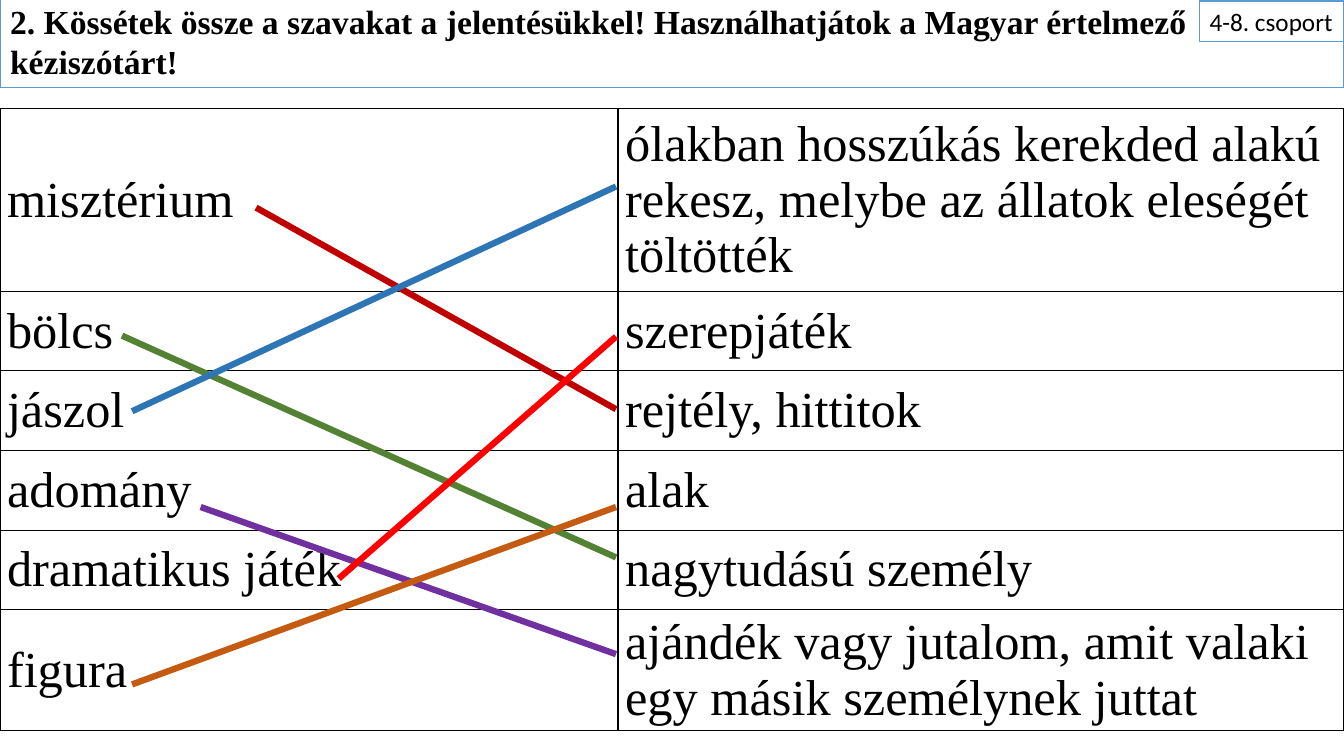
from dataclasses import dataclass

from lxml import etree
from pptx import Presentation
from pptx.dml.color import RGBColor
from pptx.enum.shapes import MSO_CONNECTOR, MSO_SHAPE
from pptx.enum.text import MSO_ANCHOR, MSO_AUTO_SIZE, PP_ALIGN
from pptx.oxml import parse_xml
from pptx.oxml.ns import nsdecls, qn
from pptx.util import Inches, Pt

LINE = MSO_CONNECTOR.STRAIGHT
RECT = MSO_SHAPE.RECTANGLE
MIDDLE = MSO_ANCHOR.MIDDLE
TOP = MSO_ANCHOR.TOP
NO_FIT = MSO_AUTO_SIZE.NONE
LEFT = PP_ALIGN.LEFT


@dataclass(frozen=True)
class Theme:
    """Colours, fonts and type sizes of the slide."""
    ink: str = "000000"
    paper: str = "FFFFFF"
    frame: str = "5B9BD5"
    serif: str = "Times New Roman"
    sans: str = "Calibri"
    head: int = 24
    label: int = 18
    cell: int = 36
    thin: float = 1
    thick: float = 4.5


THEME = Theme()
TASK = ("2. Kössétek össze a szavakat a jelentésükkel! "
        "Használhatjátok a Magyar értelmező kéziszótárt!")
ROWS = [
    ("misztérium", "ólakban hosszúkás kerekded alakú rekesz, "
                   "melybe az állatok eleségét töltötték", 1.81),
    ("bölcs", "szerepjáték", 0.79),
    ("jászol", "rejtély, hittitok", 0.79),
    ("adomány", "alak", 0.79),
    ("dramatikus játék", "nagytudású személy", 0.79),
    ("figura", "ajándék vagy jutalom, amit valaki egy másik "
               "személynek juttat", 1.2),
]
LINKS = [
    (2.54, 0.98, 2.98, "C00000"),
    (1.21, 2.25, 4.45, "548235"),
    (1.31, 3.0, 0.77, "2E75B6"),
    (1.99, 3.95, 5.41, "7030A0"),
    (3.36, 4.66, 2.26, "FF0000"),
    (1.31, 5.71, 3.95, "C55A11"),
]


def paint(fill, colour):
    """Give a fill one solid colour."""
    fill.solid()
    fill.fore_color.rgb = RGBColor.from_string(colour)


def write(frame, text, font, size, bold=False):
    """Put one left-aligned line of text in a frame."""
    frame.text = text
    para = frame.paragraphs[0]
    para.alignment = LEFT
    para.font.name = font
    para.font.size = Pt(size)
    para.font.bold = bold
    para.font.color.rgb = RGBColor.from_string(THEME.ink)


def panel(shape):
    """Give a shape the white fill and blue outline."""
    paint(shape.fill, THEME.paper)
    paint(shape.line.fill, THEME.frame)
    shape.line.width = Pt(THEME.thin)


def header(slide, x, y, w, h):
    """Place the task in the title and the group tag at its right end."""
    title = slide.shapes.title
    title.left, title.top, title.width, title.height = map(
        Inches, (x, y, w, h))
    panel(title)
    write(title.text_frame, TASK, THEME.serif, THEME.head, True)
    title.text_frame.auto_size = NO_FIT
    title.text_frame.vertical_anchor = TOP

    wide = 1.43
    tag = slide.shapes.add_shape(
        RECT, Inches(x + w - wide), Inches(y + 0.05), Inches(wide), Inches(0.4))
    tag.shadow.inherit = False
    panel(tag)
    write(tag.text_frame, "4-8. csoport", THEME.sans, THEME.label)
    tag.text_frame.word_wrap = False
    tag.text_frame.vertical_anchor = TOP


def border(cell):
    """Draw thin black lines on all four sides of a cell."""
    props = cell._tc.get_or_add_tcPr()
    for spot, side in enumerate(("lnL", "lnR", "lnT", "lnB")):
        props.insert(spot, parse_xml(
            f'<a:{side} {nsdecls("a")} w="{Pt(THEME.thin)}"><a:solidFill>'
            f'<a:srgbClr val="{THEME.ink}"/></a:solidFill></a:{side}>'))


def board(slide, x, y, w, split):
    """Place the table of words and meanings, with the lines that match them."""
    high = sum(row[2] for row in ROWS)
    table = slide.shapes.add_table(
        len(ROWS), 2, Inches(x), Inches(y), Inches(w), Inches(high)).table
    table.first_row = table.horz_banding = False
    for col, wide in zip(table.columns, (split, w - split)):
        col.width = Inches(wide)
    for row, (word, sense, tall) in zip(table.rows, ROWS):
        row.height = Inches(tall)
        for cell, text in zip(row.cells, (word, sense)):
            write(cell.text_frame, text, THEME.serif, THEME.cell)
            cell.vertical_anchor = MIDDLE
            cell.margin_left = cell.margin_right = Inches(0.07)
            cell.margin_top = cell.margin_bottom = 0
            paint(cell.fill, THEME.paper)
            border(cell)

    for start, high, low, colour in LINKS:
        link = slide.shapes.add_connector(
            LINE, Inches(x + start), Inches(y + high),
            Inches(x + split - 0.02), Inches(y + low))
        paint(link.line.fill, colour)
        link.line.width = Pt(THEME.thick)
        etree.SubElement(link._element.spPr, qn("a:effectLst"))


def main():
    """Build and save the slide."""
    deck = Presentation()
    deck.slide_width, deck.slide_height = Inches(13.33), Inches(7.5)
    slide = deck.slides.add_slide(deck.slide_layouts[5])
    paint(slide.background.fill, THEME.paper)
    header(slide, 0, -0.04, 13.33, 0.91)
    board(slide, 0, 1.08, 13.33, 6.13)
    deck.save("out.pptx")


if __name__ == "__main__":
    main()
